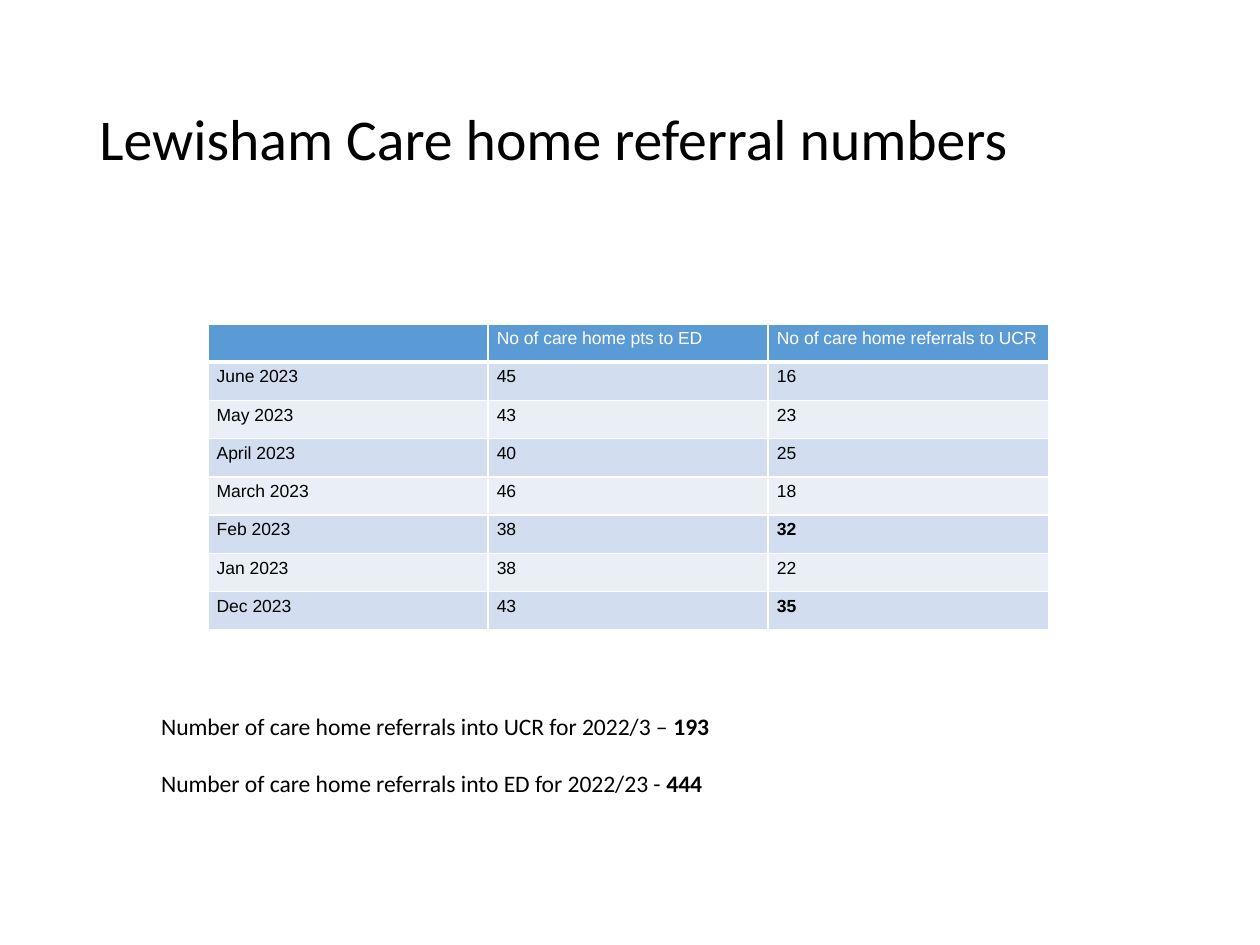
"""Build the care home referral slide."""
import dataclasses

import lxml.etree
import pptx
import pptx.dml.color
import pptx.enum.text
import pptx.oxml.ns
import pptx.util

Inches = pptx.util.Inches
Pt = pptx.util.Pt
qn = pptx.oxml.ns.qn

HUES = {"head": "5B9BD5", "odd": "D2DEEF", "even": "EAEFF7",
        "text": "000000", "white": "FFFFFF"}


@dataclasses.dataclass
class Style:
    face: str
    size: float
    hue: str = "text"


@dataclasses.dataclass
class Month:
    name: str
    ed: int
    ucr: int
    peak: bool = False


@dataclasses.dataclass
class Total:
    label: str
    count: int
    gap: float = 0


HEADS = ["", "No of care home pts to ED", "No of care home referrals to UCR"]
MONTHS = [
    Month("June 2023", 45, 16),
    Month("May 2023", 43, 23),
    Month("April 2023", 40, 25),
    Month("March 2023", 46, 18),
    Month("Feb 2023", 38, 32, True),
    Month("Jan 2023", 38, 22),
    Month("Dec 2023", 43, 35, True),
]
TOTALS = [
    Total("Number of care home referrals into UCR for 2022/3 – ", 193),
    Total("Number of care home referrals into ED for 2022/23 - ", 444, 16.5),
]


def color(name: str) -> pptx.dml.color.RGBColor:
    return pptx.dml.color.RGBColor.from_string(HUES[name])


def add_run(para, text: str, style: Style, bold: bool = False) -> None:
    run = para.add_run()
    run.text = text
    run.font.name = style.face
    run.font.size = Pt(style.size)
    run.font.bold = bold
    run.font.color.rgb = color(style.hue)


def add_box(slide, left: float, top: float, width: float, height: float):
    box = slide.shapes.add_textbox(
        Inches(left), Inches(top), Inches(width), Inches(height))
    box.text_frame.word_wrap = True
    return box.text_frame


def add_edges(cell, base: float) -> None:
    props = cell._tc.get_or_add_tcPr()
    edges = {"lnL": 1, "lnR": 1, "lnT": 1, "lnB": base}
    for spot, (tag, width) in enumerate(edges.items()):
        line = lxml.etree.Element(qn("a:" + tag), w=str(Pt(width)))
        fill = lxml.etree.SubElement(line, qn("a:solidFill"))
        lxml.etree.SubElement(fill, qn("a:srgbClr"), val=HUES["white"])
        props.insert(spot, line)


def fill_cell(cell, text: str, style: Style, fill: str,
              bold: bool = False, base: float = 1) -> None:
    cell.margin_left = cell.margin_right = Inches(0.07)
    cell.margin_top = cell.margin_bottom = Inches(0.04)
    cell.fill.solid()
    cell.fill.fore_color.rgb = color(fill)
    add_edges(cell, base)
    para = cell.text_frame.paragraphs[0]
    if text:
        add_run(para, text, style, bold)
    else:
        lxml.etree.SubElement(
            para._p, qn("a:endParaRPr"), sz=str(int(style.size * 100)))


def add_grid(slide) -> None:
    count = len(MONTHS) + 1
    grid = slide.shapes.add_table(
        count, len(HEADS), Inches(1.65), Inches(2.57),
        Inches(6.67), Inches(2.43)).table
    for col, text in enumerate(HEADS):
        fill_cell(grid.cell(0, col), text, Style("Arial", 10, "white"),
                  "head", base=3)
    for row, month in enumerate(MONTHS, 1):
        fill = "odd" if row % 2 else "even"
        for col, value in enumerate((month.name, month.ed, month.ucr)):
            fill_cell(grid.cell(row, col), str(value), Style("Arial", 10),
                      fill, bold=month.peak and col == 2)


def add_title(slide) -> None:
    frame = add_box(slide, 0.69, 0.4, 8.62, 1.45)
    frame.vertical_anchor = pptx.enum.text.MSO_ANCHOR.MIDDLE
    para = frame.paragraphs[0]
    para.line_spacing = 0.9
    add_run(para, "Lewisham Care home referral numbers", Style("Calibri", 33))


def add_totals(slide) -> None:
    frame = add_box(slide, 1.18, 5.6, 7.65, 0.78)
    style = Style("Calibri", 13.5)
    for spot, total in enumerate(TOTALS):
        para = frame.add_paragraph() if spot else frame.paragraphs[0]
        para.space_before = Pt(total.gap)
        add_run(para, total.label, style)
        add_run(para, str(total.count), style, bold=True)


def main() -> None:
    deck = pptx.Presentation()
    deck.slide_width, deck.slide_height = Inches(10), Inches(7.5)
    slide = deck.slides.add_slide(deck.slide_layouts[6])
    add_grid(slide)
    add_title(slide)
    add_totals(slide)
    deck.save("out.pptx")


if __name__ == "__main__":
    main()
